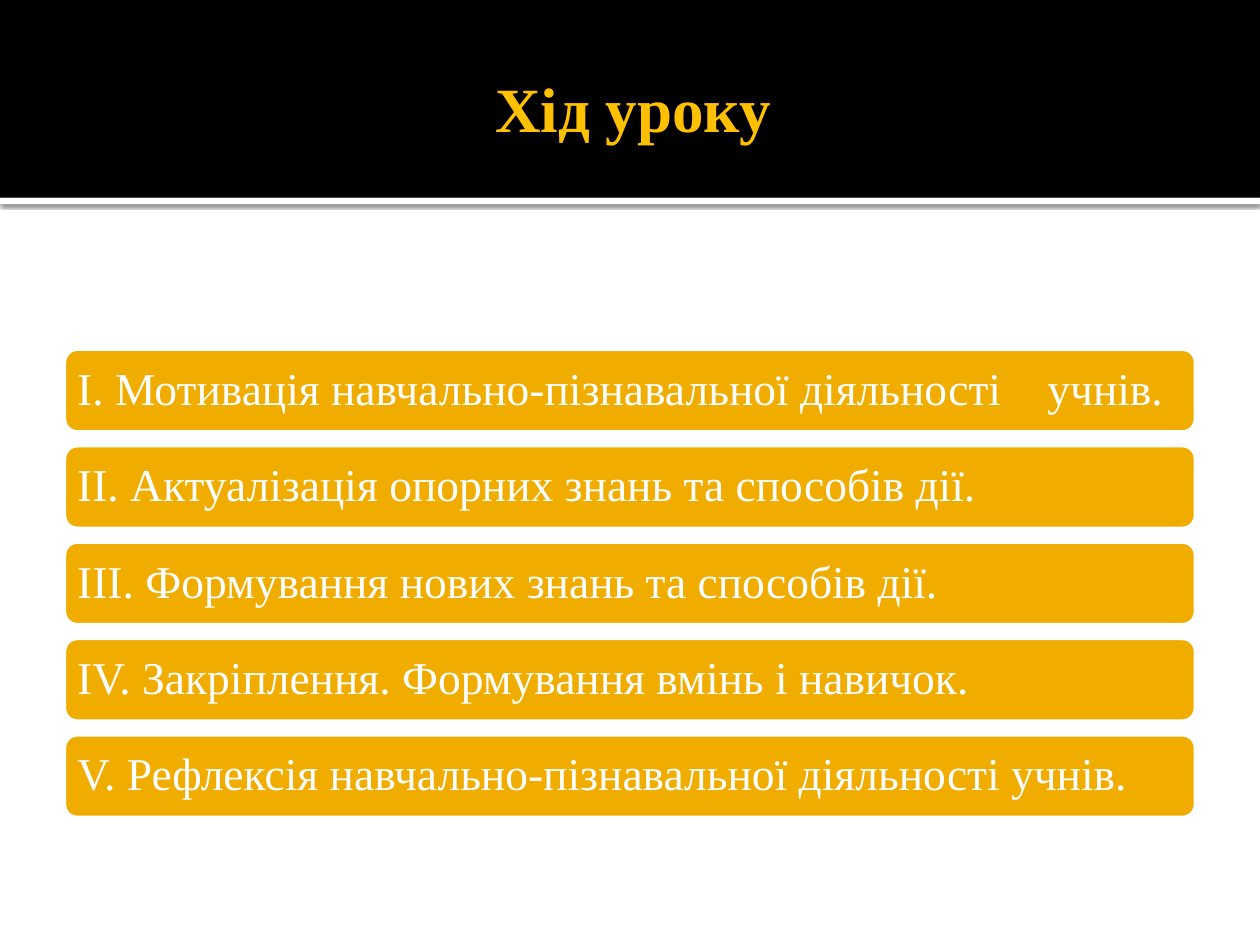
import dataclasses

import lxml.etree
import pptx
import pptx.dml.color
import pptx.enum.shapes
import pptx.enum.text
import pptx.oxml
import pptx.oxml.ns
import pptx.shapes.autoshape
import pptx.slide
import pptx.util

RGB = pptx.dml.color.RGBColor
KIND = pptx.enum.shapes.MSO_SHAPE
ALIGN = pptx.enum.text.PP_ALIGN
BLACK = RGB(0x00, 0x00, 0x00)
WHITE = RGB(0xFF, 0xFF, 0xFF)
GOLD = RGB(0xFF, 0xC0, 0x00)
AMBER = RGB(0xF0, 0xAD, 0x00)

FONT = "Times New Roman"
WIDE, HIGH = 10, 7.5

# Rows of the lesson plan
LEFT, SPAN = 0.05 * WIDE, 0.9 * WIDE
TOP, PITCH, TALL = 2.76, 0.765, 0.68
TAB = 7.7

HEAD = 1.57
RULE = 0.05


@dataclasses.dataclass(frozen=True)
class Box:
    left: float
    top: float
    width: float
    height: float

    def place(self) -> tuple:
        sides = (self.left, self.top, self.width, self.height)
        return tuple(pptx.util.Inches(side) for side in sides)


@dataclasses.dataclass(frozen=True)
class Style:
    size: float
    color: RGB
    align: ALIGN
    bold: bool = False


TITLE = Style(36, GOLD, ALIGN.CENTER, True)
STEP = Style(26, WHITE, ALIGN.LEFT)

STEPS = (
    "І. Мотивація навчально-пізнавальної діяльності\tучнів.",
    "ІІ. Актуалізація опорних знань та способів дії.",
    "ІІІ. Формування нових знань та способів дії.",
    "ІV. Закріплення. Формування вмінь і навичок.",
    "V. Рефлексія навчально-пізнавальної діяльності учнів.",
)


def add_block(slide: pptx.slide.Slide, kind: KIND, box: Box,
              color: RGB) -> pptx.shapes.autoshape.Shape:
    block = slide.shapes.add_shape(kind, *box.place())
    block.shadow.inherit = False
    block.fill.solid()
    block.fill.fore_color.rgb = color
    block.line.fill.background()
    return block


def add_shade(block: pptx.shapes.autoshape.Shape) -> None:
    """Cast a thin soft shadow straight down."""
    qn = pptx.oxml.ns.qn
    effect = block.element.spPr.find(qn("a:effectLst"))
    shade = lxml.etree.SubElement(
        effect, qn("a:outerShdw"), blurRad=str(pptx.util.Pt(2.5)),
        dist=str(pptx.util.Pt(0.8)), dir="5400000", algn="t", rotWithShape="0")
    color = lxml.etree.SubElement(shade, qn("a:srgbClr"), val=str(BLACK))
    lxml.etree.SubElement(color, qn("a:alpha"), val="60000")


def add_text(shape: pptx.shapes.autoshape.Shape, text: str, style: Style,
             inset: tuple) -> pptx.oxml.xmlchemy.BaseOxmlElement:
    frame = shape.text_frame
    frame.word_wrap = True
    frame.vertical_anchor = pptx.enum.text.MSO_ANCHOR.MIDDLE
    (frame.margin_left, frame.margin_top, frame.margin_right,
     frame.margin_bottom) = (pptx.util.Inches(side) for side in inset)
    para = frame.paragraphs[0]
    para.alignment = style.align
    run = para.add_run()
    run.text = text
    run.font.name = FONT
    run.font.size = pptx.util.Pt(style.size)
    run.font.bold = style.bold
    run.font.color.rgb = style.color
    return para


def add_step(slide: pptx.slide.Slide, row: int, text: str) -> None:
    box = Box(LEFT, TOP + row * PITCH, SPAN, TALL)
    bar = add_block(slide, KIND.ROUNDED_RECTANGLE, box, AMBER)
    bar.line.color.rgb = WHITE
    bar.line.width = pptx.util.Pt(3.78)
    para = add_text(bar, text, STEP, (0.08,) * 4)
    para.line_spacing = 0.9
    if "\t" in text:
        qn = pptx.oxml.ns.qn
        tabs = lxml.etree.SubElement(
            para._p.get_or_add_pPr(), qn("a:tabLst"))
        lxml.etree.SubElement(tabs, qn("a:tab"),
                              pos=str(pptx.util.Inches(TAB)), algn="l")


def main() -> None:
    deck = pptx.Presentation()
    deck.slide_width = pptx.util.Inches(WIDE)
    deck.slide_height = pptx.util.Inches(HIGH)
    slide = deck.slides.add_slide(deck.slide_layouts[6])

    # Header band with a white rule below
    rule = add_block(slide, KIND.RECTANGLE, Box(0, HEAD, WIDE, RULE), WHITE)
    add_shade(rule)
    add_block(slide, KIND.RECTANGLE, Box(0, 0, WIDE, HEAD), BLACK)

    # Title
    title = slide.shapes.add_textbox(*Box(LEFT, 0.17, SPAN, 1.37).place())
    add_text(title, "Хід уроку", TITLE, (0.1, 0.05, 0.05, 0.05))

    # Lesson steps
    for row, text in enumerate(STEPS):
        add_step(slide, row, text)

    deck.save("out.pptx")


if __name__ == "__main__":
    main()
